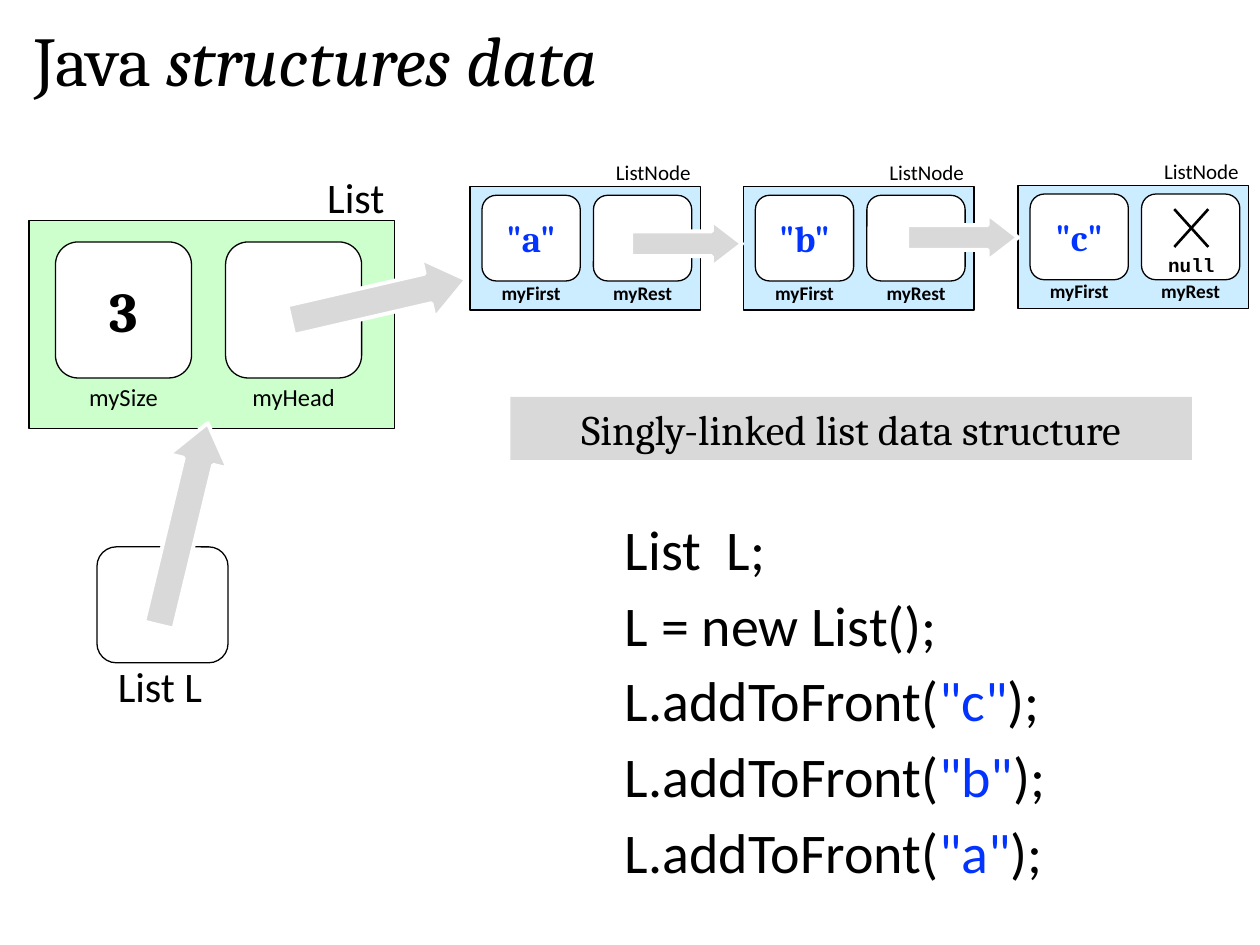
"""Build a slide that shows a Java linked list as boxes and arrows."""
import dataclasses
import typing

import lxml.etree
import pptx
import pptx.dml.color
import pptx.enum.shapes
import pptx.enum.text
import pptx.oxml.ns
import pptx.util

Shape = pptx.enum.shapes.MSO_SHAPE
Align = pptx.enum.text.PP_ALIGN
Anchor = pptx.enum.text.MSO_ANCHOR
COLS, ROWS = 100, 75
CELL = pptx.util.Inches(0.1)
BLACK, WHITE, GREY, BLUE = "000000", "FFFFFF", "D9D9D9", "0333FF"


@dataclasses.dataclass(frozen=True)
class Font:
    face: str
    size: float
    tint: str = BLACK
    bold: bool = False


@dataclasses.dataclass(frozen=True)
class Kind:
    """Look of a record; lengths are grid columns and rows."""
    name: str
    fill: str
    wide: float
    high: float
    inset: tuple[float, float]
    cell: tuple[float, float]
    step: float
    lift: float
    foot: tuple[float, float]
    head_font: Font
    cell_font: Font
    foot_font: Font


class Record(typing.NamedTuple):
    kind: Kind
    left: float
    top: float
    value: str
    names: tuple[str, str]


class Arrow(typing.NamedTuple):
    left: float
    top: float
    wide: float
    high: float
    shaft: float
    turn: float


LIST = Kind("List", "CCFFCC", 29, 16.5, (2.1, 1.7), (10.8, 10.8), 13.5, 4.2, (12.3, 3.4),
            Font("Calibri", 24), Font("Cambria", 32, BLACK, True), Font("Calibri", 14))
NODE = Kind("ListNode", "CCECFF", 18.3, 9.8, (0.95, 0.7), (7.8, 6.8), 8.85, 2.8, (6.95, 2.9),
            Font("Calibri", 12), Font("Cambria", 21, BLUE, True), Font("Calibri", 11, BLACK, True))
FIELDS = ("myFirst", "myRest")
RECORDS = [
    Record(LIST, 2.3, 17.5, "3", ("mySize", "myHead")),
    Record(NODE, 37.3, 14.8, '"a"', FIELDS),
    Record(NODE, 59, 14.8, '"b"', FIELDS),
    Record(NODE, 80.8, 14.7, '"c"', FIELDS),
]
ARROWS = [
    Arrow(22.9, 21.4, 14.3, 4.8, 0.5, 347),
    Arrow(50.1, 17.5, 8.8, 3.7, 0.53, 0),
    Arrow(72, 17, 8.8, 3.7, 0.53, 0),
    Arrow(6.3, 39.2, 16.5, 4.8, 0.5, 283.6),
]
CODE = [
    ["List  L;"],
    ["L = new List();"],
    *(["L.addToFront(", f'"{key}"', ");"] for key in "cba"),
]


def grid(*spans: float) -> list[int]:
    """Turn grid counts into slide lengths."""
    return [round(span * CELL) for span in spans]


def tint(code: str) -> pptx.dml.color.RGBColor:
    """Turn a hex string into a colour."""
    return pptx.dml.color.RGBColor.from_string(code)


def style(run, font: Font) -> None:
    """Give a run its font."""
    run.font.name, run.font.size = font.face, pptx.util.Pt(font.size)
    run.font.bold = font.bold
    run.font.color.rgb = tint(font.tint)


def write(shape, text: str, font: Font, align=Align.CENTER) -> None:
    """Put one line of text in a shape."""
    frame = shape.text_frame
    frame.text = text
    frame.word_wrap = False
    frame.vertical_anchor = Anchor.MIDDLE
    frame.paragraphs[0].alignment = align
    style(frame.paragraphs[0].runs[0], font)


def label(slide, place: typing.Sequence[float], text: str, font: Font, align=Align.CENTER) -> None:
    """Add a line of free text."""
    write(slide.shapes.add_textbox(*grid(*place)), text, font, align)


def block(slide, form, place: typing.Sequence[float], fill: str,
          edge: str | None = BLACK, weight: float = 0.75):
    """Add a filled shape with an optional edge."""
    shape = slide.shapes.add_shape(form, *grid(*place))
    shape.shadow.inherit = False
    shape.fill.solid()
    shape.fill.fore_color.rgb = tint(fill)
    if edge:
        shape.line.color.rgb = tint(edge)
        shape.line.width = pptx.util.Pt(weight)
    else:
        shape.line.fill.background()
    return shape


def draw_record(slide, item: Record) -> None:
    """Draw a record with its heading, cells and field names."""
    kind = item.kind
    block(slide, Shape.RECTANGLE, (item.left, item.top, kind.wide, kind.high), kind.fill)
    label(slide, (item.left, item.top - kind.lift, kind.wide + 0.2, kind.lift + 0.5),
          kind.name, kind.head_font, Align.RIGHT)
    for spot, (name, value) in enumerate(zip(item.names, (item.value, ""))):
        left = item.left + kind.inset[0] + spot * kind.step
        cell = block(slide, Shape.ROUNDED_RECTANGLE,
                     (left, item.top + kind.inset[1], *kind.cell), WHITE)
        if value:
            write(cell, value, kind.cell_font)
        drop, high = kind.foot
        label(slide, (left, item.top + drop, kind.cell[0], high), name, kind.foot_font)


def draw_null(slide) -> None:
    """Cross out the last link and name it null."""
    for start, end in ((16.6, 19.6), (19.6, 16.6)):
        line = slide.shapes.add_connector(pptx.enum.shapes.MSO_CONNECTOR.STRAIGHT,
                                          *grid(93.2, start, 95.9, end))
        line.line.color.rgb = tint(BLACK)
        line.line.width = pptx.util.Pt(1.5)
        lxml.etree.SubElement(line._element.spPr, pptx.oxml.ns.qn("a:effectLst"))
    label(slide, (91.7, 19.6, 5.7, 2.9), "null", Font("Courier New", 11, BLACK, True))


def draw_arrow(slide, item: Arrow) -> None:
    """Draw a block arrow."""
    shape = block(slide, Shape.RIGHT_ARROW, item[:4], GREY, WHITE, 2.25)
    shape.adjustments[0], shape.adjustments[1] = item.shaft, 0.65
    shape.rotation = item.turn


def place_holder(shape, *spans: float) -> None:
    """Move a placeholder and set its frame."""
    shape.left, shape.top, shape.width, shape.height = grid(*spans)
    shape.text_frame.word_wrap = True
    shape.text_frame.auto_size = pptx.enum.text.MSO_AUTO_SIZE.NONE
    shape.text_frame.vertical_anchor = Anchor.TOP


def fill_line(line, parts: typing.Iterable[str], font: Font) -> None:
    """Write a line as runs, with quoted parts in blue."""
    line.alignment = Align.LEFT
    for part in parts:
        run = line.add_run()
        run.text = part
        style(run, dataclasses.replace(font, tint=BLUE) if part.startswith('"') else font)


def draw_code(body) -> None:
    """Write the code lines without bullets."""
    place_holder(body, 48.6, 40.3, 39.1, 31)
    frame = body.text_frame
    for spot, parts in enumerate(CODE):
        line = frame.add_paragraph() if spot else frame.paragraphs[0]
        fill_line(line, parts, Font("Calibri", 32))
        line.space_before, line.space_after = pptx.util.Pt(0), pptx.util.Pt(5)
        props = line._p.get_or_add_pPr()
        props.set("marL", "0")
        props.set("indent", "0")
        lxml.etree.SubElement(props, pptx.oxml.ns.qn("a:buNone"))


def main() -> None:
    """Build and save the slide."""
    deck = pptx.Presentation()
    deck.slide_width, deck.slide_height = grid(COLS, ROWS)
    slide = deck.slides.add_slide(deck.slide_layouts[1])
    title, body = slide.placeholders
    place_holder(title, 1.7, 0.8, 58.4, 7.7)
    heading = title.text_frame.paragraphs[0]
    fill_line(heading, ("Java ", "structures data"), Font("Cambria", 40))
    heading.runs[1].font.italic = True
    draw_code(body)
    for item in RECORDS:
        draw_record(slide, item)
    draw_null(slide)
    block(slide, Shape.ROUNDED_RECTANGLE, (7.7, 43.4, 10.4, 9.2), WHITE)
    label(slide, (7.7, 51.9, 10, 5), "List L", Font("Calibri", 24))
    banner = block(slide, Shape.RECTANGLE, (40.5, 31.5, 54.1, 5), GREY, None)
    write(banner, "Singly-linked list data structure", Font("Cambria", 24))
    for item in ARROWS:
        draw_arrow(slide, item)
    deck.save("out.pptx")


if __name__ == "__main__":
    main()
